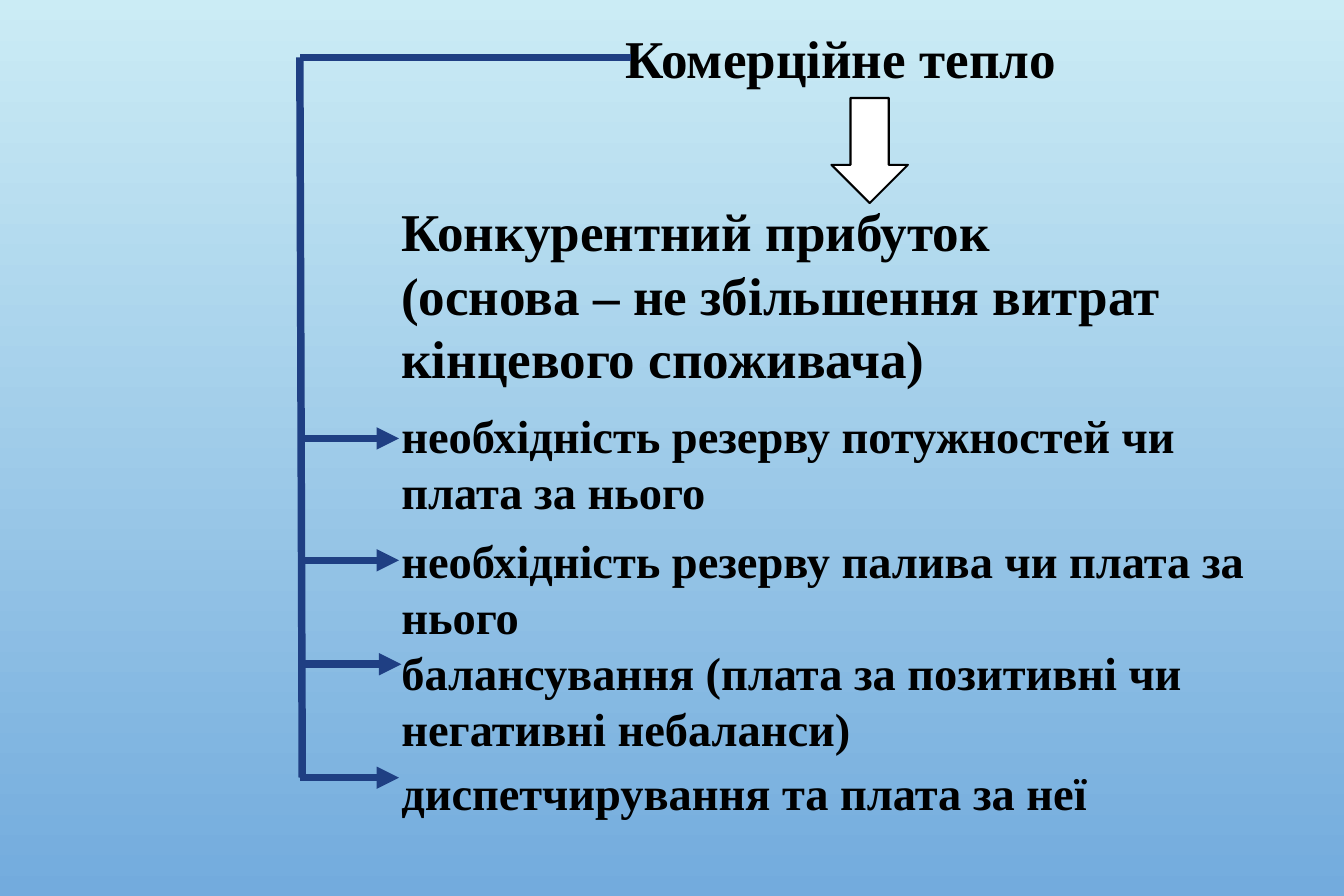
"""Build the slide on commercial heat and its four cost items."""
import lxml.etree
import pptx
import pptx.dml.color
import pptx.enum.dml
import pptx.enum.shapes
import pptx.enum.text
import pptx.oxml.ns
import pptx.util

Inches = pptx.util.Inches
Pt = pptx.util.Pt
RGBColor = pptx.dml.color.RGBColor
Align = pptx.enum.text.PP_ALIGN
qn = pptx.oxml.ns.qn

SKY = RGBColor(0xCB, 0xEC, 0xF5)
BLUE = RGBColor(0x73, 0xAB, 0xDD)
NAVY = RGBColor(0x1F, 0x3F, 0x83)
BLACK = RGBColor(0, 0, 0)
WHITE = RGBColor(0xFF, 0xFF, 0xFF)


class Board:
    font = "Times New Roman"
    ink = BLACK
    line = NAVY
    weight = Pt(4.5)

    def __init__(self, deck):
        self.slide = deck.slides.add_slide(deck.slide_layouts[1])

    def paint(self, top, bottom):
        fill = self.slide.background.fill
        fill.gradient()
        fill.gradient_angle = 270
        for stop, color, place in zip(fill.gradient_stops, (top, bottom), (0, 1)):
            stop.color.rgb = color
            stop.position = place

    def letter(self, shape, lines, size, align=Align.LEFT, gaps=()):
        frame = shape.text_frame
        frame.text = "\n".join(lines)
        frame.word_wrap = True
        frame.auto_size = pptx.enum.text.MSO_AUTO_SIZE.NONE
        frame.vertical_anchor = pptx.enum.text.MSO_ANCHOR.TOP
        for index, para in enumerate(frame.paragraphs):
            props = para._p.get_or_add_pPr()
            props.set("marL", "0")
            props.set("indent", "0")
            lxml.etree.SubElement(props, qn("a:buNone"))
            para.alignment = align
            para.line_spacing = 1.0
            para.space_before = Pt(gaps[index] if gaps else 0)
            for run in para.runs:
                run.font.name = self.font
                run.font.size = Pt(size)
                run.font.bold = True
                run.font.color.rgb = self.ink

    def hold(self, index, box, lines, size, **style):
        shape = self.slide.placeholders[index]
        shape.left, shape.top, shape.width, shape.height = map(Inches, box)
        self.letter(shape, lines, size, **style)

    def text(self, box, lines, size):
        self.letter(self.slide.shapes.add_textbox(*map(Inches, box)), lines, size)

    def rule(self, start, end, arrow=False):
        rule = self.slide.shapes.add_connector(
            pptx.enum.shapes.MSO_CONNECTOR.STRAIGHT, *map(Inches, start + end))
        rule.line.color.rgb = self.line
        rule.line.width = self.weight
        if arrow:
            lxml.etree.SubElement(rule.line._get_or_add_ln(), qn("a:tailEnd"), type="triangle")
        lxml.etree.SubElement(rule._element.spPr, qn("a:effectLst"))

    def block(self, box):
        block = self.slide.shapes.add_shape(
            pptx.enum.shapes.MSO_SHAPE.DOWN_ARROW, *map(Inches, box))
        block.shadow.inherit = False
        block.fill.solid()
        block.fill.fore_color.rgb = WHITE
        block.line.color.rgb = self.ink
        block.line.width = Pt(1.25)


def main():
    deck = pptx.Presentation()
    deck.slide_width, deck.slide_height = Inches(11.25), Inches(7.5)
    board = Board(deck)
    board.paint(SKY, BLUE)

    board.hold(0, (3.26, 0.16, 7.56, 0.64), ["Комерційне тепло"], 32, align=Align.CENTER)
    board.hold(1, (3.26, 3.36, 7.64, 3.42), [
        "необхідність резерву потужностей чи плата за нього",
        "необхідність резерву палива чи плата за нього",
        "балансування (плата за позитивні чи негативні небаланси)",
        "диспетчирування та плата за неї",
    ], 28, gaps=(0, 8, 0, 5))
    board.text((3.26, 1.61, 7.64, 1.72), [
        "Конкурентний прибуток",
        "(основа – не збільшення витрат кінцевого споживача)",
    ], 32)
    board.block((6.96, 0.82, 0.64, 0.88))

    board.rule((5.28, 0.48), (2.51, 0.48))
    board.rule((2.51, 0.48), (2.53, 6.51))
    for left, top in ((2.51, 3.67), (2.51, 4.69), (2.53, 5.56), (2.51, 6.51)):
        board.rule((left, top), (left + 0.83, top), arrow=True)

    deck.save("out.pptx")


if __name__ == "__main__":
    main()
